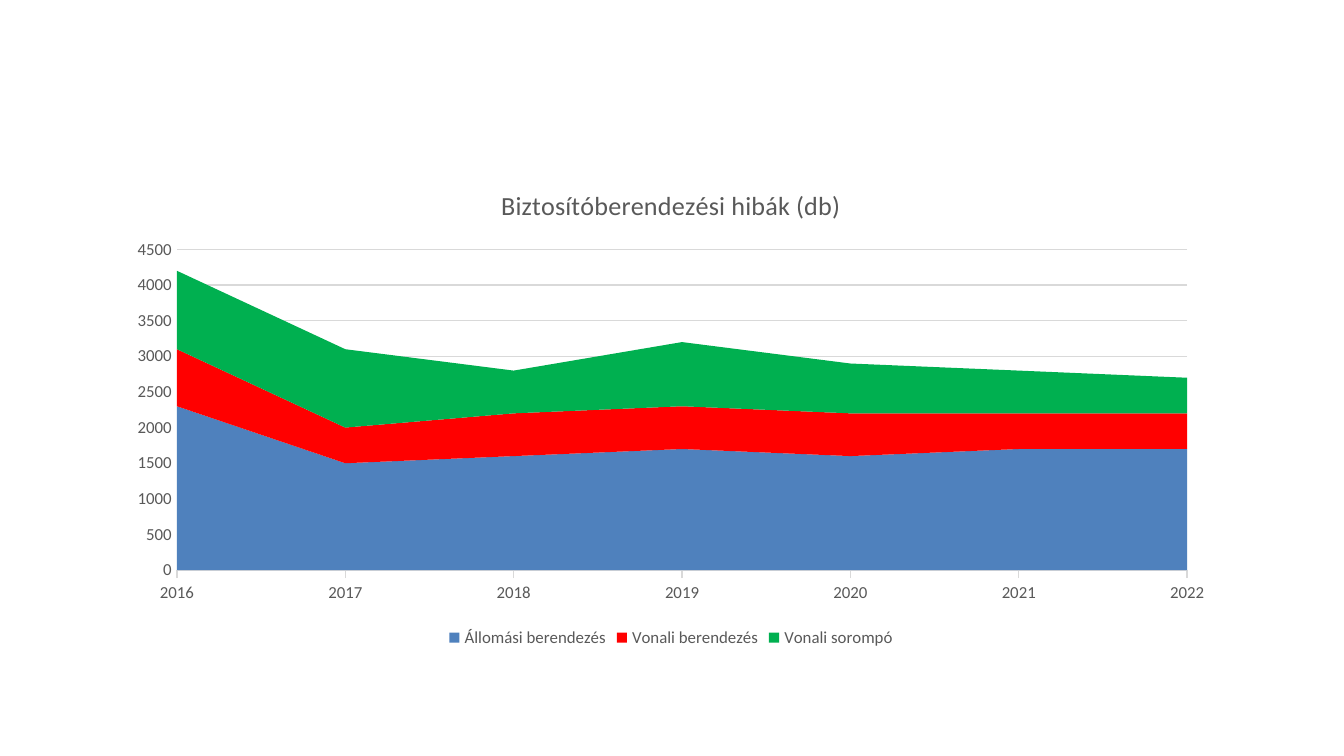
from pptx import Presentation
from pptx.chart.data import CategoryChartData
from pptx.dml.color import RGBColor
from pptx.enum.chart import XL_CHART_TYPE as ChartType
from pptx.enum.chart import XL_LEGEND_POSITION as LegendPosition
from pptx.enum.chart import XL_TICK_MARK as TickMark
from pptx.oxml.ns import qn
from pptx.util import Cm, Pt


def color(hex_value):
    return RGBColor.from_string(hex_value)


class SlideBuilder:
    FONT = "Calibri"
    TEXT = "595959"
    GRID = "D9D9D9"

    def __init__(self, slide):
        self.slide = slide

    def style_font(self, font, size):
        font.name = self.FONT
        font.size = Pt(size)
        font.bold = False
        font.color.rgb = color(self.TEXT)

    def style_line(self, line):
        line.color.rgb = color(self.GRID)
        line.width = Pt(0.75)

    def add_area_chart(self, title, categories, series, left, top, width, height):
        data = CategoryChartData(number_format="General")
        data.categories = categories
        for name, values, _ in series:
            data.add_series(name, values)
        frame = self.slide.shapes.add_chart(
            ChartType.AREA_STACKED, Cm(left), Cm(top), Cm(width), Cm(height), data)
        chart = frame.chart
        self.style_font(chart.font, 9)

        # Series colours
        plot = chart.plots[0]
        plot.vary_by_categories = False
        for area, (_, _, fill) in zip(plot.series, series):
            area.format.fill.solid()
            area.format.fill.fore_color.rgb = color(fill)
            area.format.line.fill.background()

        self.add_title(chart, title)
        self.style_axes(chart)
        self.add_legend(chart)

    def add_title(self, chart, text):
        chart.has_title = True
        chart.chart_title.include_in_layout = False
        paragraph = chart.chart_title.text_frame.paragraphs[0]
        run = paragraph.add_run()
        run.text = text
        self.style_font(run.font, 14)

    def style_axes(self, chart):
        category_axis, value_axis = chart.category_axis, chart.value_axis
        for axis in (category_axis, value_axis):
            axis.minor_tick_mark = TickMark.NONE
            self.style_font(axis.tick_labels.font, 9)
        category_axis.major_tick_mark = TickMark.OUTSIDE
        category_axis.has_major_gridlines = False
        self.style_line(category_axis.format.line)

        value_axis.major_tick_mark = TickMark.NONE
        value_axis.minimum_scale = 0
        value_axis.maximum_scale = 4500
        value_axis.major_unit = 500
        value_axis.has_major_gridlines = True
        value_axis.format.line.fill.background()
        self.style_line(value_axis.major_gridlines.format.line)

        # Areas start right at the value axis
        for crossing in chart.element.iter(qn("c:crossBetween")):
            crossing.set("val", "midCat")

    def add_legend(self, chart):
        chart.has_legend = True
        chart.legend.position = LegendPosition.BOTTOM
        chart.legend.include_in_layout = False
        self.style_font(chart.legend.font, 9)


def main():
    presentation = Presentation()
    presentation.slide_width = Cm(25.4)
    presentation.slide_height = Cm(14.29)
    builder = SlideBuilder(presentation.slides.add_slide(presentation.slide_layouts[6]))

    # Stacked faults by equipment type
    years = [str(year) for year in range(2016, 2023)]
    faults = [
        ("Állomási berendezés", (2300, 1500, 1600, 1700, 1600, 1700, 1700), "4F81BD"),
        ("Vonali berendezés", (800, 500, 600, 600, 600, 500, 500), "FF0000"),
        ("Vonali sorompó", (1100, 1100, 600, 900, 700, 600, 500), "00B050"),
    ]
    builder.add_area_chart("Biztosítóberendezési hibák (db)", years, faults,
                           left=2.18, top=3.12, width=21, height=9.22)
    presentation.save("out.pptx")


if __name__ == "__main__":
    main()
